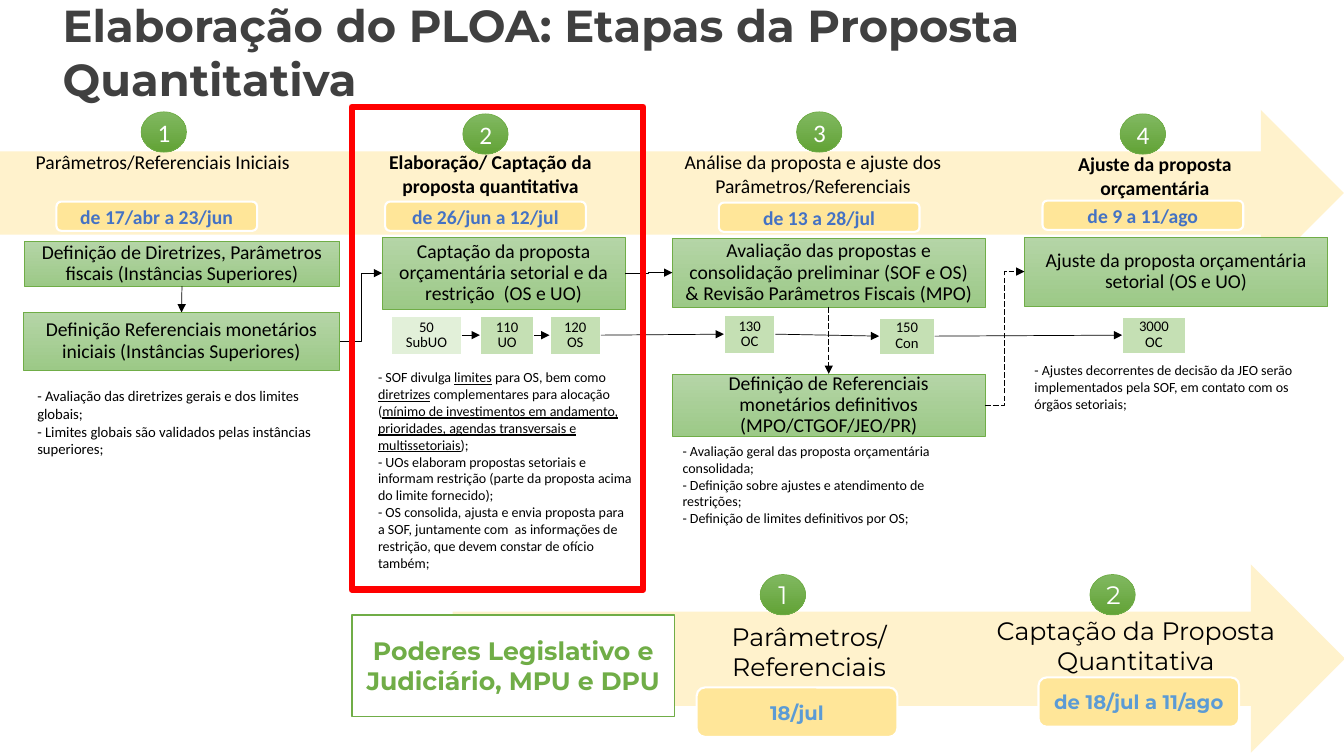
from dataclasses import dataclass
from typing import Optional

from lxml import etree
from pptx import Presentation
from pptx.dml.color import RGBColor
from pptx.enum.dml import MSO_LINE
from pptx.enum.shapes import MSO_CONNECTOR, MSO_SHAPE
from pptx.enum.text import MSO_ANCHOR, MSO_AUTO_SIZE, PP_ALIGN
from pptx.oxml.ns import qn
from pptx.util import Emu, Pt

PX = 9144  # 100 px to the inch
BLACK = RGBColor(0x00, 0x00, 0x00)
WHITE = RGBColor(0xFF, 0xFF, 0xFF)
GREY = RGBColor(0x40, 0x40, 0x40)
RED = RGBColor(0xFF, 0x00, 0x00)
CREAM = RGBColor(0xFF, 0xF2, 0xCC)
GOLD = RGBColor(0xFF, 0xE6, 0x99)
GREEN = RGBColor(0x70, 0xAD, 0x47)
LIGHT_GREEN = RGBColor(0xC5, 0xE0, 0xB4)
PALE_GREEN = RGBColor(0xE2, 0xF0, 0xD9)
BLUE = RGBColor(0x44, 0x72, 0xC4)
SKY_BLUE = RGBColor(0x5B, 0x9B, 0xD5)
BOX_GRADIENT = (RGBColor(0xB5, 0xD5, 0xA7), RGBColor(0x9C, 0xC9, 0x87))
BADGE_GRADIENT = (RGBColor(0x81, 0xB8, 0x61), RGBColor(0x62, 0xA3, 0x36))
SANS, DISPLAY = "Calibri", "Montserrat"
TOP, LEFT, BOTTOM, RIGHT = range(4)

Area = tuple[int, int, int, int]  # left, top, width, height


@dataclass
class Stage:
    number: str
    badge: tuple[int, int]
    caption: list[str]
    caption_area: Area
    date: str
    date_area: Area
    bold: bool = False
    font: str = SANS
    caption_size: int = 14
    date_color: RGBColor = BLUE


@dataclass
class Box:
    name: str
    text: str
    area: Area
    fill: Optional[RGBColor] = None  # None means the green gradient


@dataclass
class Note:
    area: Area
    lines: list[str]
    size: float = 10


@dataclass
class Link:
    start: str
    end: str
    sides: tuple[int, int] = (RIGHT, LEFT)
    elbow: bool = False
    dashed: bool = False


STAGES = [
    Stage("1", (140, 111), ["Parâmetros/Referenciais Iniciais"], (21, 144, 281, 34),
          "de 17/abr a 23/jun", (56, 200, 199, 29)),
    Stage("2", (459, 113), ["Elaboração/ Captação da proposta quantitativa"], (346, 144, 281, 57),
          "de 26/jun a 12/jul", (382, 200, 199, 29), bold=True),
    Stage("3", (790, 111), ["Análise da proposta e ajuste dos Parâmetros/Referenciais"],
          (638, 144, 337, 57), "de 13 a 28/jul", (713, 201, 199, 29)),
    Stage("4", (1111, 113), ["Ajuste da proposta orçamentária"], (1022, 146, 247, 57),
          "de 9 a 11/ago", (1034, 199, 199, 29), bold=True),
    Stage("1", (754, 570), ["Parâmetros/", "Referenciais"], (662, 611, 281, 71),
          "18/jul", (691, 682, 199, 49), False, DISPLAY, 18, SKY_BLUE),
    Stage("2", (1081, 570), ["Captação da Proposta Quantitativa"], (919, 605, 415, 71),
          "de 18/jul a 11/ago", (1030, 672, 199, 49), False, DISPLAY, 18, SKY_BLUE),
]
BOXES = [
    Box("diretrizes", "Definição de Diretrizes, Parâmetros fiscais (Instâncias Superiores)",
        (24, 239, 313, 45)),
    Box("iniciais", "Definição Referenciais monetários iniciais (Instâncias Superiores)",
        (23, 310, 314, 57)),
    Box("captação", "Captação da proposta orçamentária setorial e da restrição  (OS e UO)",
        (379, 235, 241, 72)),
    Box("avaliação", "Avaliação das propostas e consolidação preliminar (SOF e OS) "
        "& Revisão Parâmetros Fiscais (MPO)", (667, 236, 310, 69)),
    Box("definitivos", "Definição de Referenciais monetários definitivos (MPO/CTGOF/JEO/PR)",
        (667, 371, 310, 62)),
    Box("ajuste", "Ajuste da proposta orçamentária setorial (OS e UO)", (1016, 235, 301, 69)),
    Box("50", "50 SubUO", (388, 313, 70, 39), PALE_GREEN),
    Box("110", "110 UO", (476, 313, 54, 39), LIGHT_GREEN),
    Box("120", "120 OS", (545, 313, 51, 39), LIGHT_GREEN),
    Box("130", "130 OC", (718, 312, 51, 39), LIGHT_GREEN),
    Box("150", "150 Con", (872, 315, 55, 37), LIGHT_GREEN),
    Box("3000", "3000 OC", (1113, 314, 63, 37), LIGHT_GREEN),
]
# Underscores enclose underlined words.
NOTES = [
    Note((27, 384, 310, 71), ["- Avaliação das diretrizes gerais e dos limites globais;",
         "- Limites globais são validados pelas instâncias superiores;"], 10.5),
    Note((365, 366, 263, 202), [
        "- SOF divulga _limites_ para OS, bem como _diretrizes_ complementares para alocação "
        "(_mínimo de investimentos em andamento, prioridades, agendas transversais e "
        "multissetoriais_);",
        "- UOs elaboram propostas setoriais e informam restrição (parte da proposta acima "
        "do limite fornecido);",
        "- OS consolida, ajusta e envia proposta para a SOF, juntamente com  as informações "
        "de restrição, que devem constar de ofício também;"]),
    Note((667, 439, 310, 84), ["- Avaliação geral das proposta orçamentária consolidada;",
         "- Definição sobre ajustes e atendimento de restrições;",
         "- Definição de limites definitivos por OS;"]),
    Note((1016, 359, 301, 50), ["- Ajustes decorrentes de decisão da JEO serão implementados "
         "pela SOF, em contato com os órgãos setoriais;"]),
]
LINKS = [
    Link("diretrizes", "iniciais", (BOTTOM, TOP)),
    Link("iniciais", "captação", elbow=True),
    Link("captação", "avaliação", elbow=True),
    Link("avaliação", "definitivos", (BOTTOM, TOP), dashed=True),
    Link("definitivos", "ajuste", elbow=True, dashed=True),
    Link("50", "110"), Link("110", "120"), Link("120", "130"),
    Link("130", "150"), Link("150", "3000"),
]


def scaled(area: Area) -> list[Emu]:
    return [Emu(length * PX) for length in area]


def write(frame, lines: list[str], *, size: float, font: str = SANS, color: RGBColor = BLACK,
          bold: bool = False, align=PP_ALIGN.CENTER, anchor=MSO_ANCHOR.MIDDLE,
          inset: Optional[int] = None, spacing: Optional[float] = None, indent: int = 0) -> None:
    frame.word_wrap = True
    frame.vertical_anchor = anchor
    if inset is not None:
        frame.margin_left = frame.margin_top = Emu(inset * PX)
        frame.margin_right = frame.margin_bottom = Emu(inset * PX)
    for index, line in enumerate(lines):
        paragraph = frame.add_paragraph() if index else frame.paragraphs[0]
        paragraph.alignment = align
        if spacing:
            paragraph.line_spacing = spacing
        if indent:
            paragraph._p.get_or_add_pPr().set("marL", str(indent * PX))
        for part, words in enumerate(line.split("_")):
            run = paragraph.add_run()
            run.text = words
            run.font.name, run.font.size, run.font.bold = font, Pt(size), bold
            run.font.color.rgb = color
            if part % 2:
                run.font.underline = True


def add_text(slide, area: Area, lines: list[str], **text_format) -> None:
    frame = slide.shapes.add_textbox(*scaled(area)).text_frame
    write(frame, lines, anchor=MSO_ANCHOR.TOP, **text_format)
    frame.auto_size = MSO_AUTO_SIZE.SHAPE_TO_FIT_TEXT


def add_shape(slide, kind, area: Area, *, fill: Optional[RGBColor] = None, gradient=None,
              line: Optional[RGBColor] = None, width: float = 0.5):
    shape = slide.shapes.add_shape(kind, *scaled(area))
    shape.shadow.inherit = False
    if gradient:
        shape.fill.gradient()
        shape.fill.gradient_angle = 270
        for stop, color in zip(shape.fill.gradient_stops, gradient):
            stop.color.rgb = color
    elif fill is not None:
        shape.fill.solid()
        shape.fill.fore_color.rgb = fill
    else:
        shape.fill.background()
    if line is not None:
        shape.line.color.rgb = line
        shape.line.width = Pt(width)
    else:
        shape.line.fill.background()
    return shape


def add_box(slide, box: Box):
    if box.fill is None:
        shape = add_shape(slide, MSO_SHAPE.RECTANGLE, box.area, gradient=BOX_GRADIENT, line=GREEN)
    else:
        shape = add_shape(slide, MSO_SHAPE.RECTANGLE, box.area, fill=box.fill, line=WHITE, width=1.5)
    size = 14 if box.fill is None else 10.5
    write(shape.text_frame, [box.text], size=size, inset=12, spacing=0.9)
    return shape


def add_link(slide, link: Link, shapes: dict) -> None:
    kind = MSO_CONNECTOR.ELBOW if link.elbow else MSO_CONNECTOR.STRAIGHT
    connector = slide.shapes.add_connector(kind, 0, 0, 0, 0)
    connector.begin_connect(shapes[link.start], link.sides[0])
    connector.end_connect(shapes[link.end], link.sides[1])
    connector.line.color.rgb = BLACK
    connector.line.width = Pt(0.5)
    if link.dashed:
        connector.line.dash_style = MSO_LINE.LONG_DASH
    properties = connector._element.spPr
    etree.SubElement(properties.find(qn("a:ln")), qn("a:tailEnd"), type="triangle")
    etree.SubElement(properties, qn("a:effectLst"))


def add_stage(slide, stage: Stage) -> None:
    add_text(slide, stage.caption_area, stage.caption, size=stage.caption_size,
             font=stage.font, bold=stage.bold)
    badge = add_shape(slide, MSO_SHAPE.OVAL, (*stage.badge, 45, 40),
                      gradient=BADGE_GRADIENT, line=GREEN)
    write(badge.text_frame, [stage.number], size=18, font=stage.font, color=WHITE)
    date = add_shape(slide, MSO_SHAPE.ROUNDED_RECTANGLE, stage.date_area,
                     fill=GOLD, line=WHITE, width=1.5)
    write(date.text_frame, [stage.date], size=14, font=stage.font,
          color=stage.date_color, bold=True)


def main() -> None:
    presentation = Presentation()
    presentation.slide_width, presentation.slide_height = Emu(1333 * PX), Emu(750 * PX)
    slide = presentation.slides.add_slide(presentation.slide_layouts[5])
    title = slide.shapes.title
    title.left, title.top, title.width, title.height = scaled((52, 21, 1189, 61))
    write(title.text_frame, ["Elaboração do PLOA: Etapas da Proposta Quantitativa"], size=32,
          font=DISPLAY, color=GREY, bold=True, align=PP_ALIGN.LEFT)
    title.text_frame.auto_size = MSO_AUTO_SIZE.NONE

    for arrow_area in ((0, 109, 1333, 165), (449, 560, 885, 187)):
        add_shape(slide, MSO_SHAPE.RIGHT_ARROW, arrow_area, fill=CREAM)
    shapes = {box.name: add_box(slide, box) for box in BOXES}
    for note in NOTES:
        add_text(slide, note.area, note.lines, size=note.size, align=PP_ALIGN.LEFT,
                 inset=0, indent=10)
    for link in LINKS:
        add_link(slide, link, shapes)
    for stage in STAGES:
        add_stage(slide, stage)
    add_shape(slide, MSO_SHAPE.RECTANGLE, (349, 106, 289, 479), line=RED, width=4.5)
    branches = add_shape(slide, MSO_SHAPE.RECTANGLE, (349, 610, 320, 101),
                         fill=WHITE, line=GREEN, width=1)
    write(branches.text_frame, ["Poderes Legislativo e Judiciário, MPU e DPU"], size=18,
          font=DISPLAY, color=GREEN, bold=True)
    presentation.save("out.pptx")


if __name__ == "__main__":
    main()
